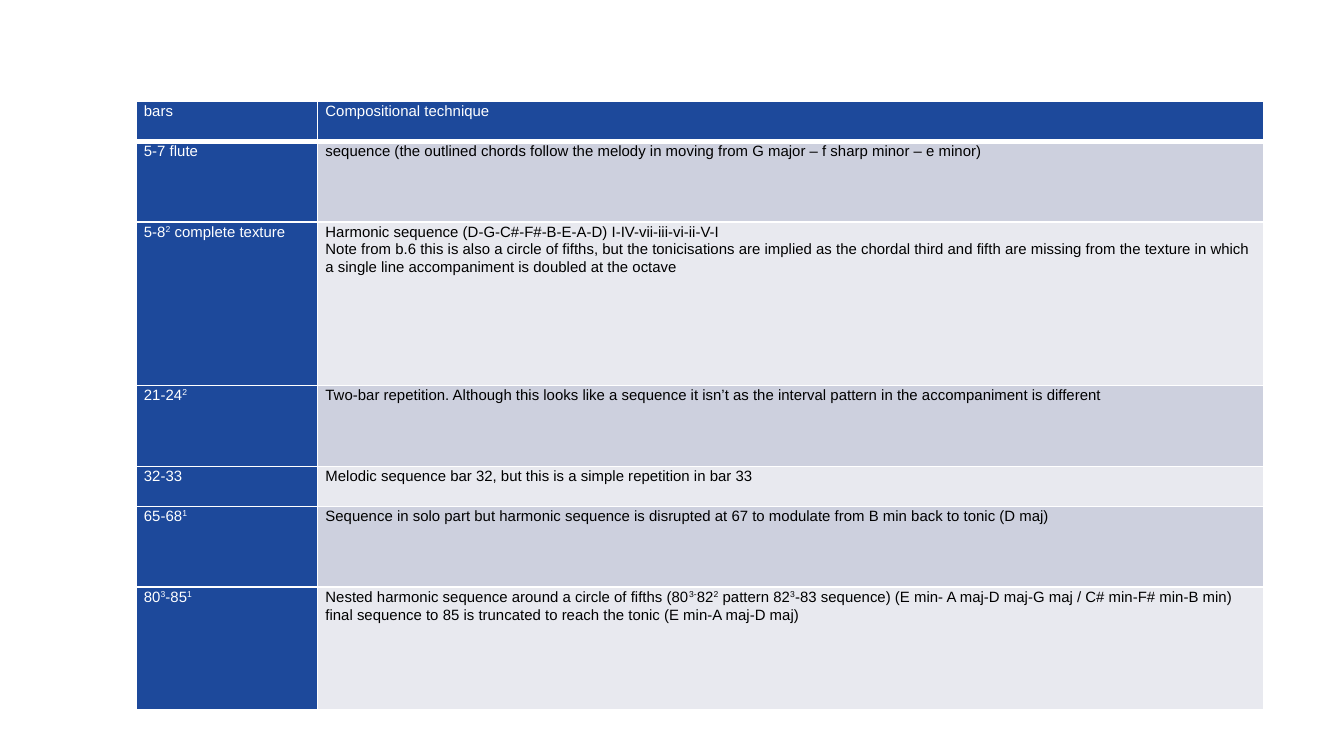
"""Build a slide with a table of compositional techniques by bar number."""
from dataclasses import dataclass

from lxml.etree import SubElement
from pptx import Presentation
from pptx.dml.color import RGBColor
from pptx.oxml.ns import qn
from pptx.table import Table, _Cell
from pptx.util import Cm, Pt


@dataclass(frozen=True)
class Theme:
    font: str = "Arial"
    size: float = 8
    line_spacing: float = 1.07
    border: float = 1
    header_border: float = 3
    superscript: int = 30000
    blue: str = "1D499B"
    bands: tuple[str, str] = ("CDD0DE", "E8E9EF")
    white: str = "FFFFFF"
    black: str = "000000"


@dataclass(frozen=True)
class TechniqueRow:
    bars: str
    technique: str
    lines: int


THEME = Theme()
SUPERSCRIPT_MARK = "|"
COLUMN_WIDTHS = (Cm(3.43), Cm(17.88))
ROWS = (
    TechniqueRow("bars", "Compositional technique", 1),
    TechniqueRow(
        "5-7 flute",
        "sequence (the outlined chords follow the melody in moving from "
        "G major – f sharp minor – e minor)",
        2,
    ),
    TechniqueRow(
        "5-8|2| complete texture",
        "Harmonic sequence (D-G-C#-F#-B-E-A-D) I-IV-vii-iii-vi-ii-V-I\n"
        "Note from b.6 this is also a circle of fifths, but the tonicisations are "
        "implied as the chordal third and fifth are missing from the texture in "
        "which a single line accompaniment is doubled at the octave",
        4,
    ),
    TechniqueRow(
        "21-24|2",
        "Two-bar repetition. Although this looks like a sequence it isn’t as the "
        "interval pattern in the accompaniment is different",
        2,
    ),
    TechniqueRow(
        "32-33", "Melodic sequence bar 32, but this is a simple repetition in bar 33", 1
    ),
    TechniqueRow(
        "65-68|1",
        "Sequence in solo part but harmonic sequence is disrupted at 67 to "
        "modulate from B min back to tonic (D maj)",
        2,
    ),
    TechniqueRow(
        "80|3|-85|1",
        "Nested harmonic sequence around a circle of fifths (80|3-|82|2| pattern "
        "82|3|-83 sequence) (E min- A maj-D maj-G maj / C# min-F# min-B min) "
        "final sequence to 85 is truncated to reach the tonic (E min-A maj-D maj)",
        3,
    ),
)


def row_height(lines: int) -> Cm:
    """Return the height of a row that holds the given number of lines."""
    return Cm(0.78 * lines - 0.03)


def set_border(cell: _Cell, side: str, width: float) -> None:
    """Draw one white edge of a cell."""
    line = SubElement(cell._tc.get_or_add_tcPr(), qn(f"a:ln{side}"), w=str(Pt(width)))
    fill = SubElement(line, qn("a:solidFill"))
    SubElement(fill, qn("a:srgbClr"), val=THEME.white)


def write_text(cell: _Cell, text: str, *, color: str) -> None:
    """Write paragraphs whose marked parts are superscript."""
    frame = cell.text_frame
    for index, content in enumerate(text.split("\n")):
        paragraph = frame.add_paragraph() if index else frame.paragraphs[0]
        paragraph.line_spacing = THEME.line_spacing
        for position, part in enumerate(content.split(SUPERSCRIPT_MARK)):
            span = paragraph.add_run()
            span.text = part
            span.font.name = THEME.font
            span.font.size = Pt(THEME.size)
            span.font.bold = False
            span.font.color.rgb = RGBColor.from_string(color)
            if position % 2:
                span._r.get_or_add_rPr().set("baseline", str(THEME.superscript))


def format_cell(cell: _Cell, *, fill: str, top: float, bottom: float) -> None:
    """Set the margins, edges and fill of a cell."""
    cell.margin_left = cell.margin_right = Cm(0.15)
    cell.margin_top = cell.margin_bottom = Cm(0)
    widths = {"L": THEME.border, "R": THEME.border, "T": top, "B": bottom}
    for side, width in widths.items():
        set_border(cell, side, width)
    cell.fill.solid()
    cell.fill.fore_color.rgb = RGBColor.from_string(fill)


def fill_row(table: Table, index: int, row: TechniqueRow) -> None:
    """Fill one row, blue in the header and the first column."""
    table.rows[index].height = row_height(row.lines)
    top = THEME.header_border if index == 1 else THEME.border
    bottom = THEME.header_border if index == 0 else THEME.border
    for column, text in enumerate((row.bars, row.technique)):
        is_heading = index == 0 or column == 0
        cell = table.cell(index, column)
        fill = THEME.blue if is_heading else THEME.bands[(index - 1) % 2]
        format_cell(cell, fill=fill, top=top, bottom=bottom)
        write_text(cell, text, color=THEME.white if is_heading else THEME.black)


def main() -> None:
    """Build and save the deck."""
    deck = Presentation()
    deck.slide_width, deck.slide_height = Cm(25.4), Cm(14.29)
    page = deck.slides.add_slide(deck.slide_layouts[6])
    height = sum(row_height(row.lines) for row in ROWS)
    table = page.shapes.add_table(
        len(ROWS), len(COLUMN_WIDTHS), Cm(2.57), Cm(1.92), sum(COLUMN_WIDTHS), height
    ).table
    for column, width in zip(table.columns, COLUMN_WIDTHS):
        column.width = width
    for index, row in enumerate(ROWS):
        fill_row(table, index, row)
    deck.save("out.pptx")


if __name__ == "__main__":
    main()
